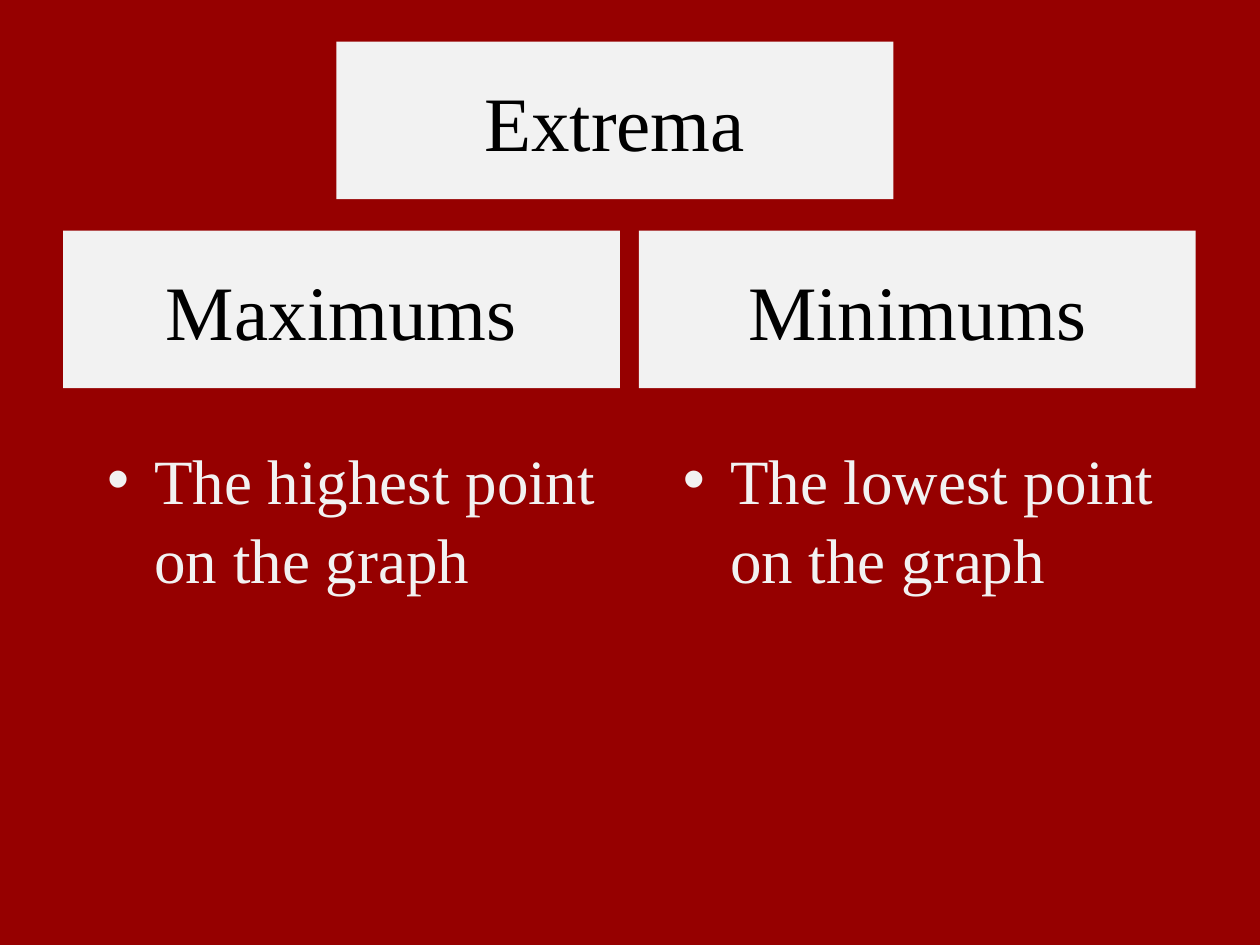
from dataclasses import dataclass

from pptx import Presentation
from pptx.dml.color import RGBColor
from pptx.enum.shapes import MSO_SHAPE
from pptx.enum.text import MSO_ANCHOR, MSO_AUTO_SIZE, PP_ALIGN
from pptx.shapes.autoshape import Shape
from pptx.slide import Slide
from pptx.util import Inches, Pt

RECTANGLE = MSO_SHAPE.RECTANGLE
MIDDLE = MSO_ANCHOR.MIDDLE
FIXED_SIZE = MSO_AUTO_SIZE.NONE
CENTER = PP_ALIGN.CENTER

FONT = "Times New Roman"
RED = "960000"
PALE = "F2F2F2"
BLACK = "000000"
TWO_CONTENT_LAYOUT = 3

SLIDE_WIDTH, SLIDE_HEIGHT = 10, 7.5
LEFT_MARGIN = 0.5
COLUMN_PITCH = 4.57
HEADING_WIDTH, HEADING_HEIGHT = 4.42, 1.25
TITLE_LEFT, TITLE_TOP = 2.67, 0.33
HEADING_TOP = 1.83
BODY_INSET = 0.25
BODY_TOP, BODY_HEIGHT = 3.42, 3.25
BODY_WIDTH = HEADING_WIDTH - BODY_INSET


@dataclass(frozen=True)
class Extremum:
    heading: str
    definition: str


EXTREMA = (
    Extremum("Maximums", "The highest point on the graph"),
    Extremum("Minimums", "The lowest point on the graph"),
)


def color(value: str) -> RGBColor:
    return RGBColor.from_string(value)


def place(shape: Shape, left: float, top: float, width: float, height: float) -> None:
    shape.left, shape.top = Inches(left), Inches(top)
    shape.width, shape.height = Inches(width), Inches(height)


def write(shape: Shape, wording: str, size: int, ink: str) -> None:
    frame = shape.text_frame
    frame.text = wording
    frame.word_wrap = True
    frame.auto_size = FIXED_SIZE
    font = frame.paragraphs[0].runs[0].font
    font.name = FONT
    font.size = Pt(size)
    font.color.rgb = color(ink)


def format_heading(heading: Shape, wording: str) -> None:
    heading.fill.solid()
    heading.fill.fore_color.rgb = color(PALE)
    heading.line.fill.background()
    write(heading, wording, 44, BLACK)
    heading.text_frame.vertical_anchor = MIDDLE
    heading.text_frame.paragraphs[0].alignment = CENTER


def draw_extremum(slide: Slide, column: int, extremum: Extremum) -> None:
    left = LEFT_MARGIN + column * COLUMN_PITCH
    heading = slide.shapes.add_shape(
        RECTANGLE, Inches(left), Inches(HEADING_TOP),
        Inches(HEADING_WIDTH), Inches(HEADING_HEIGHT),
    )
    heading.shadow.inherit = False
    format_heading(heading, extremum.heading)

    definition = slide.placeholders[column + 1]
    place(definition, left + BODY_INSET, BODY_TOP, BODY_WIDTH, BODY_HEIGHT)
    write(definition, extremum.definition, 36, PALE)
    definition.text_frame.paragraphs[0].line_spacing = 1.05


def main() -> None:
    deck = Presentation()
    deck.slide_width, deck.slide_height = Inches(SLIDE_WIDTH), Inches(SLIDE_HEIGHT)
    slide = deck.slides.add_slide(deck.slide_layouts[TWO_CONTENT_LAYOUT])
    slide.background.fill.solid()
    slide.background.fill.fore_color.rgb = color(RED)

    title = slide.shapes.title
    place(title, TITLE_LEFT, TITLE_TOP, HEADING_WIDTH, HEADING_HEIGHT)
    format_heading(title, "Extrema")
    for column, extremum in enumerate(EXTREMA):
        draw_extremum(slide, column, extremum)

    deck.save("out.pptx")


if __name__ == "__main__":
    main()
